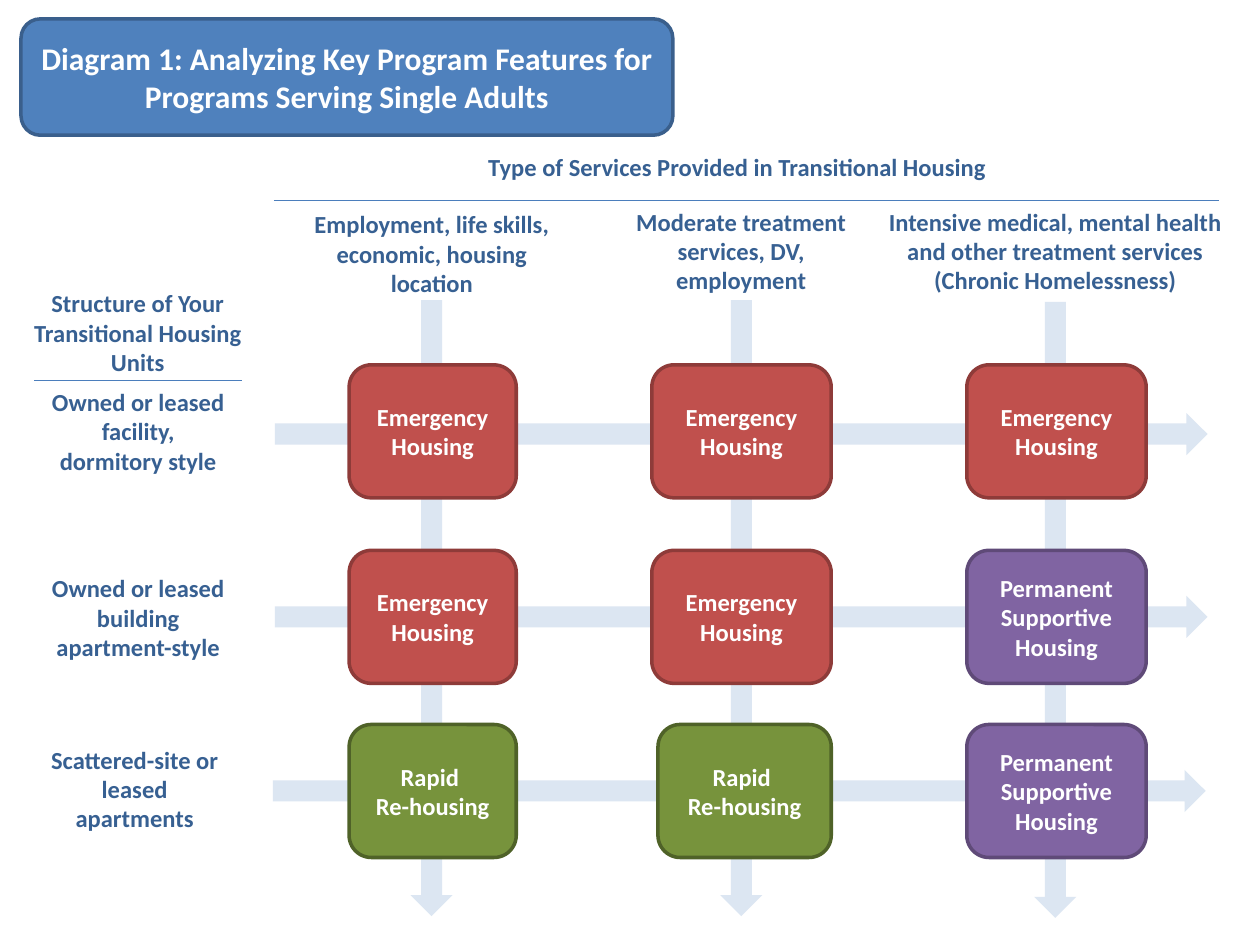
from lxml import etree
from pptx import Presentation
from pptx import util as u
from pptx.dml.color import RGBColor
from pptx.enum import shapes, text
from pptx.oxml import ns

COLOURS = {
    "title": "4F81BD", "title edge": "3A5F8C",
    "emergency": "C0504D", "emergency edge": "8E3B39",
    "rapid": "77933C", "rapid edge": "4F6228",
    "permanent": "8064A2", "permanent edge": "5F4A78",
    "arrow": "DCE6F2", "rule": "4B7EBC", "label": "376092", "white": "FFFFFF",
}


class Diagram:
    font = "Calibri"
    size = 14

    def __init__(self, page):
        self.page = page

    def colour(self, name):
        return RGBColor.from_string(COLOURS[name])

    def fill_text(self, frame, lines, colour, size):
        frame.word_wrap = True
        for index, line in enumerate(lines):
            para = frame.paragraphs[0] if index == 0 else frame.add_paragraph()
            para.text = line
            para.alignment = text.PP_ALIGN.CENTER
            para.font.name = self.font
            para.font.size = u.Pt(size)
            para.font.bold = True
            para.font.color.rgb = self.colour(colour)

    def label(self, left, top, width, height, *lines):
        box = self.page.shapes.add_textbox(*map(u.Pt, (left, top, width, height)))
        self.fill_text(box.text_frame, lines, "label", self.size)
        box.text_frame.auto_size = text.MSO_AUTO_SIZE.SHAPE_TO_FIT_TEXT

    def shape(self, preset, left, top, width, height, fill):
        shape = self.page.shapes.add_shape(preset, *map(u.Pt, (left, top, width, height)))
        shape.shadow.inherit = False
        shape.fill.solid()
        shape.fill.fore_color.rgb = self.colour(fill)
        return shape

    def box(self, left, top, width, height, kind, wording, size=None):
        box = self.shape(shapes.MSO_SHAPE.ROUNDED_RECTANGLE, left, top, width, height, kind)
        box.line.color.rgb = self.colour(kind + " edge")
        box.line.width = u.Pt(2)
        box.text_frame.vertical_anchor = text.MSO_ANCHOR.MIDDLE
        self.fill_text(box.text_frame, [wording], "white", size or self.size)

    def arrow(self, centre_x, centre_y, length, rotation=0):
        thickness = 24
        arrow = self.shape(shapes.MSO_SHAPE.RIGHT_ARROW, centre_x - length / 2,
                           centre_y - thickness / 2, length, thickness, "arrow")
        arrow.line.fill.background()
        arrow.rotation = rotation

    def rule(self, left, right, y):
        rule = self.page.shapes.add_connector(
            shapes.MSO_CONNECTOR.STRAIGHT, *map(u.Pt, (left, y, right, y)))
        rule.line.color.rgb = self.colour("rule")
        rule.line.width = u.Pt(0.75)
        etree.SubElement(rule.element.spPr, ns.qn("a:effectLst"))


def main():
    deck = Presentation()
    deck.slide_width, deck.slide_height = u.Pt(720), u.Pt(540)
    diagram = Diagram(deck.slides.add_slide(deck.slide_layouts[6]))

    # Title
    diagram.box(12, 10.8, 372.5, 66.5, "title",
                "Diagram 1: Analyzing Key Program Features for Programs Serving Single Adults", 18)

    # Service headings across the top
    diagram.label(261.5, 83.5, 319.5, 24.5, "Type of Services Provided in Transitional Housing")
    diagram.label(170, 116, 153.5, 58.5, "Employment, life skills, economic, housing location")
    diagram.label(346.5, 114.5, 154, 58.5, "Moderate treatment services, DV, employment")
    diagram.label(496, 114.5, 214, 58.5,
                  "Intensive medical, mental health and other treatment services (Chronic Homelessness)")

    # Structure headings down the side
    diagram.label(11, 161.3, 135.5, 58.5, "Structure of Your Transitional Housing Units")
    diagram.label(19.5, 217.5, 119, 58.5, "Owned or leased facility,", "dormitory style")
    diagram.label(19.5, 324, 119, 58.5, "Owned or leased building apartment-style")
    diagram.label(17.5, 422, 119, 58.5, "Scattered-site or leased apartments")

    # Arrows behind the grid
    for centre_x, centre_y in ((246.6, 347.5), (423.6, 347.5), (603, 348.5)):
        diagram.arrow(centre_x, centre_y, 352, rotation=90)
    for centre_x, centre_y in ((422.5, 452), (423.5, 352.5), (423.5, 248)):
        diagram.arrow(centre_x, centre_y, 533)

    # Grid of housing types
    wording = {"emergency": "Emergency Housing", "rapid": "Rapid \nRe-housing",
               "permanent": "Permanent Supportive Housing"}
    columns = ((199.5, 95.5), (372.5, 102.5), (552.5, 102.5))
    rows = (
        (208.5, ("emergency", "emergency", "emergency")),
        (314.5, ("emergency", "emergency", "permanent")),
        (414, ("rapid", "rapid", "permanent")),
    )
    for top, kinds in rows:
        for column, ((left, width), kind) in enumerate(zip(columns, kinds)):
            # The middle rapid box is slightly narrower, with the same right edge
            inset = 3.5 if column == 1 and kind == "rapid" else 0
            diagram.box(left + inset, top, width - inset, 76, kind, wording[kind])

    # Rules under the headings
    diagram.rule(156.5, 696.5, 114.5)
    diagram.rule(19.5, 138.5, 217.5)

    deck.save("out.pptx")


if __name__ == "__main__":
    main()
